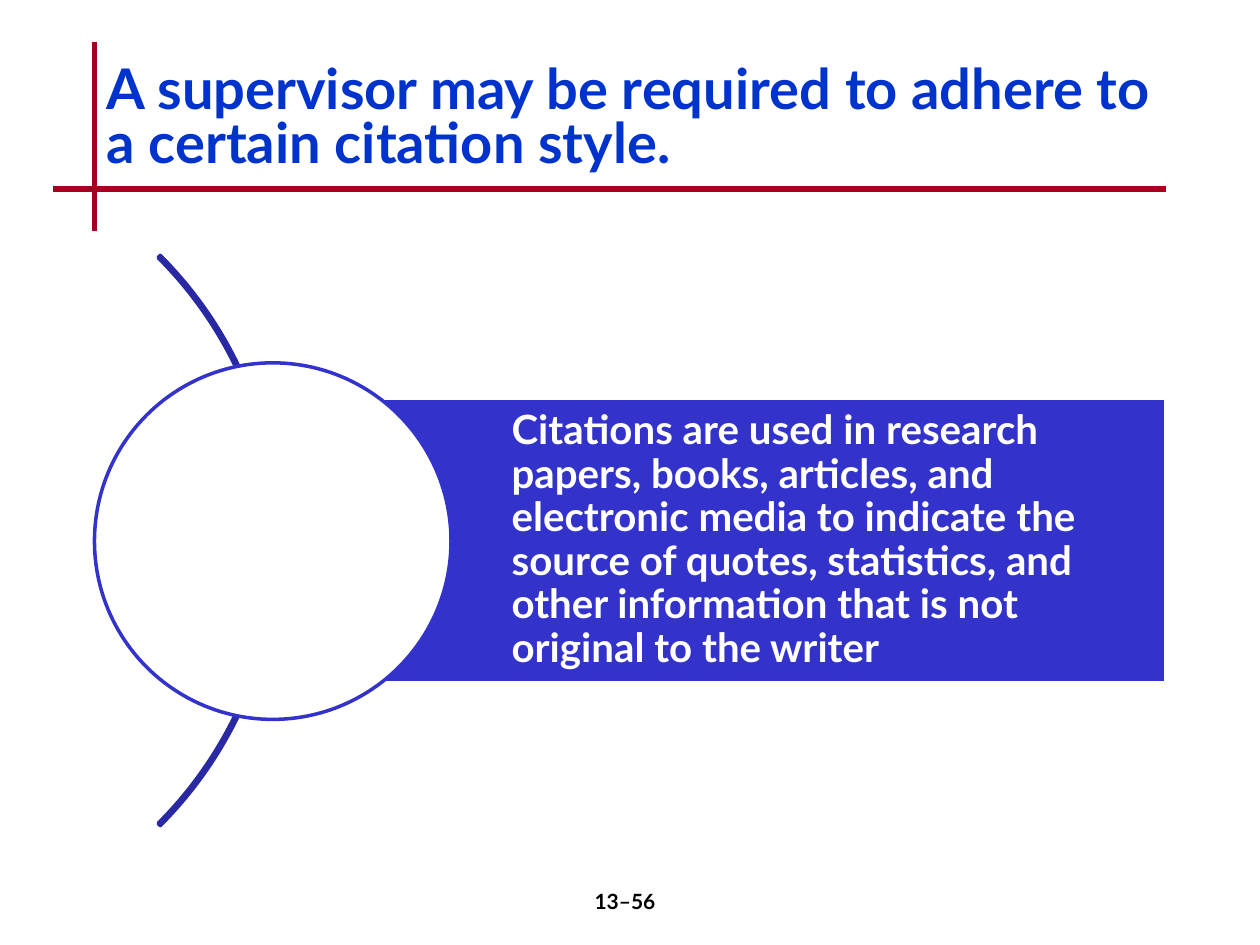
from lxml.etree import SubElement
from pptx import Presentation
from pptx.dml.color import RGBColor
from pptx.enum.shapes import MSO_CONNECTOR, MSO_SHAPE
from pptx.enum.text import MSO_ANCHOR, PP_ALIGN
from pptx.oxml.ns import qn
from pptx.util import Inches, Pt


def colour(hex_code):
    return RGBColor.from_string(hex_code)


def write_text(frame, text, *, size, color, font="Lato", align=PP_ALIGN.LEFT,
               anchor=MSO_ANCHOR.TOP, spacing=1.0, insets=(0.1, 0.05, 0.1, 0.05)):
    """Fill a text frame with one bold paragraph."""
    frame.word_wrap = True
    frame.vertical_anchor = anchor
    (frame.margin_left, frame.margin_top,
     frame.margin_right, frame.margin_bottom) = map(Inches, insets)
    para = frame.paragraphs[0]
    para.alignment = align
    para.line_spacing = spacing
    span = para.add_run()
    span.text = text
    span.font.name = font
    span.font.size = Pt(size)
    span.font.bold = True
    span.font.color.rgb = colour(color)


class SlideBuilder:
    RED = "A50021"
    TITLE_BLUE = "0033CC"
    BLUE = "3333CC"
    DARK_BLUE = "2929A3"
    WHITE = "FFFFFF"
    BLACK = "000000"

    def __init__(self, slide):
        self.shapes = slide.shapes

    def rule(self, start, end):
        line = self.shapes.add_connector(
            MSO_CONNECTOR.STRAIGHT, *map(Inches, start + end))
        line.line.color.rgb = colour(self.RED)
        line.line.width = Pt(3)
        SubElement(line._element.spPr, qn("a:effectLst"))

    def shape(self, kind, box, line, fill=None, adjustments=()):
        shape = self.shapes.add_shape(kind, *map(Inches, box))
        shape.shadow.inherit = False
        for index, value in enumerate(adjustments):
            shape.adjustments[index] = value
        if fill:
            shape.fill.solid()
            shape.fill.fore_color.rgb = colour(fill)
        else:
            shape.fill.background()
        shape.line.color.rgb = colour(line)
        shape.line.width = Pt(2)
        return shape

    def text(self, box, text, **style):
        text_box = self.shapes.add_textbox(*map(Inches, box))
        write_text(text_box.text_frame, text, **style)


def main():
    deck = Presentation()
    deck.slide_width, deck.slide_height = Inches(10), Inches(7.5)
    page = SlideBuilder(deck.slides.add_slide(deck.slide_layouts[6]))

    # Crossed rules beside and below the title
    page.rule((0.75, 0.33), (0.75, 1.83))
    page.rule((0.42, 1.5), (9.25, 1.5))

    # Arc, text panel and circle
    page.shape(MSO_SHAPE.BLOCK_ARC, (-4.19, 1.09, 6.4, 6.4), page.DARK_BLUE,
               adjustments=(189, 27, 0.004))
    panel = page.shape(MSO_SHAPE.RECTANGLE, (2.17, 3.16, 7.08, 2.26),
                       page.WHITE, fill=page.BLUE)
    write_text(panel.text_frame,
               "Citations are used in research papers, books, articles, and "
               "electronic media to indicate the source of quotes, statistics, "
               "and other information that is not original to the writer",
               size=23, color=page.WHITE, anchor=MSO_ANCHOR.MIDDLE,
               spacing=0.9, insets=(1.89, 0.06, 0.06, 0.06))
    page.shape(MSO_SHAPE.OVAL, (0.75, 2.88, 2.83, 2.83), page.BLUE,
               fill=page.WHITE)

    # Title
    page.text((0.75, 0.33, 8.5, 1.25),
              "A supervisor may be required to adhere to a certain citation style.",
              size=32, color=page.TITLE_BLUE, anchor=MSO_ANCHOR.MIDDLE, spacing=0.8)

    # Page number
    page.text((3.92, 7, 2.08, 0.5), "13–56", size=12, color=page.BLACK,
              align=PP_ALIGN.CENTER)

    deck.save("out.pptx")


if __name__ == "__main__":
    main()
